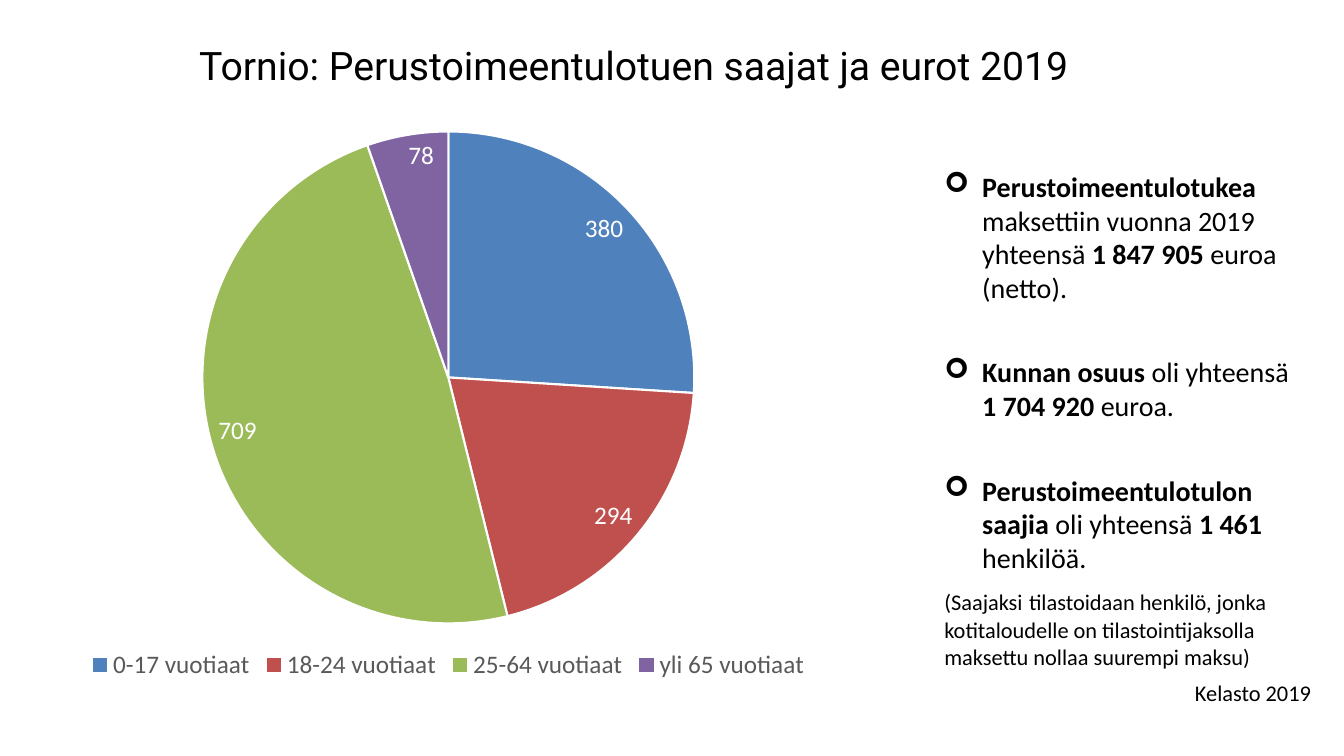
from pptx import Presentation
from pptx.chart.data import CategoryChartData
from pptx.dml.color import RGBColor
from pptx.enum.chart import XL_CHART_TYPE as ChartType
from pptx.enum.chart import XL_LABEL_POSITION as LabelPosition
from pptx.enum.chart import XL_LEGEND_POSITION as LegendPosition
from pptx.enum.text import MSO_ANCHOR, PP_ALIGN
from pptx.oxml.xmlchemy import OxmlElement
from pptx.util import Pt


def color(value):
    return RGBColor.from_string(value)


def style(font, size, value, face="Calibri"):
    font.name = face
    font.size = Pt(size)
    font.color.rgb = color(value)


deck = Presentation()
deck.slide_width, deck.slide_height = Pt(960), Pt(540)
slide = deck.slides.add_slide(deck.slide_layouts[5])

title = slide.shapes.title
title.left, title.top, title.width, title.height = Pt(24), Pt(16), Pt(864), Pt(60)
title.text_frame.text = "Tornio: Perustoimeentulotuen saajat ja eurot 2019 "
title.text_frame.vertical_anchor = MSO_ANCHOR.MIDDLE
heading = title.text_frame.paragraphs[0]
heading.alignment = PP_ALIGN.CENTER
style(heading.runs[0].font, 28, "000000", "Roboto")

recipients = {
    "0-17 vuotiaat": (380, "4F81BD"),
    "18-24 vuotiaat": (294, "C0504D"),
    "25-64 vuotiaat": (709, "9BBB59"),
    "yli 65 vuotiaat": (78, "8064A2"),
}
age_data = CategoryChartData()
age_data.categories = list(recipients)
age_data.add_series("Saajat", [count for count, _ in recipients.values()])
age_pie = slide.shapes.add_chart(
    ChartType.PIE, Pt(24), Pt(84), Pt(592.5), Pt(405.5), age_data
).chart
age_pie.has_title = False
style(age_pie.font, 10, "000000")
age_pie.has_legend = True
age_pie.legend.position = LegendPosition.BOTTOM
age_pie.legend.include_in_layout = False
style(age_pie.legend.font, 18, "595959")

plot = age_pie.plots[0]
plot.vary_by_categories = True
plot.has_data_labels = True
plot.data_labels.show_value = True
plot.data_labels.position = LabelPosition.INSIDE_END
style(plot.data_labels.font, 18, "FFFFFF")
for index, (_, fill) in enumerate(recipients.values()):
    slice_format = plot.series[0].points[index].format
    slice_format.fill.solid()
    slice_format.fill.fore_color.rgb = color(fill)
    slice_format.line.color.rgb = color("FFFFFF")
    slice_format.line.width = Pt(1.5)

facts = [
    [("Perustoimeentulotukea ", True), ("maksettiin vuonna 2019 yhteensä ", False),
     ("1 847 905 ", True), ("euroa (netto).", False)],
    [("Kunnan osuus ", True), ("oli yhteensä ", False),
     ("1 704 920 ", True), ("euroa.", False)],
    [("Perustoimeentulotulon saajia ", True), ("oli yhteensä ", False),
     ("1 461 ", True), ("henkilöä.", False)],
]
summary = slide.shapes.add_textbox(Pt(667.5), Pt(117.5), Pt(263), Pt(356.5)).text_frame
summary.word_wrap = True
for index, fact in enumerate(facts):
    paragraph = summary.add_paragraph() if index else summary.paragraphs[0]
    properties = paragraph._p.get_or_add_pPr()
    properties.set("marL", str(Pt(27)))
    properties.set("indent", str(-Pt(27)))
    bullet_font = OxmlElement("a:buFont")
    bullet_font.set("typeface", "Wingdings")
    bullet = OxmlElement("a:buChar")
    bullet.set("char", "➢")
    properties.extend([bullet_font, bullet])
    if index:
        paragraph.space_before = Pt(36.4)
    for text, bold in fact:
        run = paragraph.add_run()
        run.text = text
        style(run.font, 20, "000000")
        run.font.bold = bold

definition = summary.add_paragraph()
definition.space_before = Pt(6)
for text, size in [
    ("(Saajaksi", 16),
    (" ", 20),
    ("tilastoidaan henkilö, jonka kotitaloudelle on tilastointijaksolla "
     "maksettu nollaa suurempi maksu)", 16),
]:
    run = definition.add_run()
    run.text = text
    style(run.font, size, "000000")

credit = slide.shapes.add_textbox(Pt(846.5), Pt(481.5), Pt(113.5), Pt(26.5)).text_frame
credit.word_wrap = True
credit.text = "Kelasto 2019"
style(credit.paragraphs[0].runs[0].font, 16, "000000")

deck.save("out.pptx")
